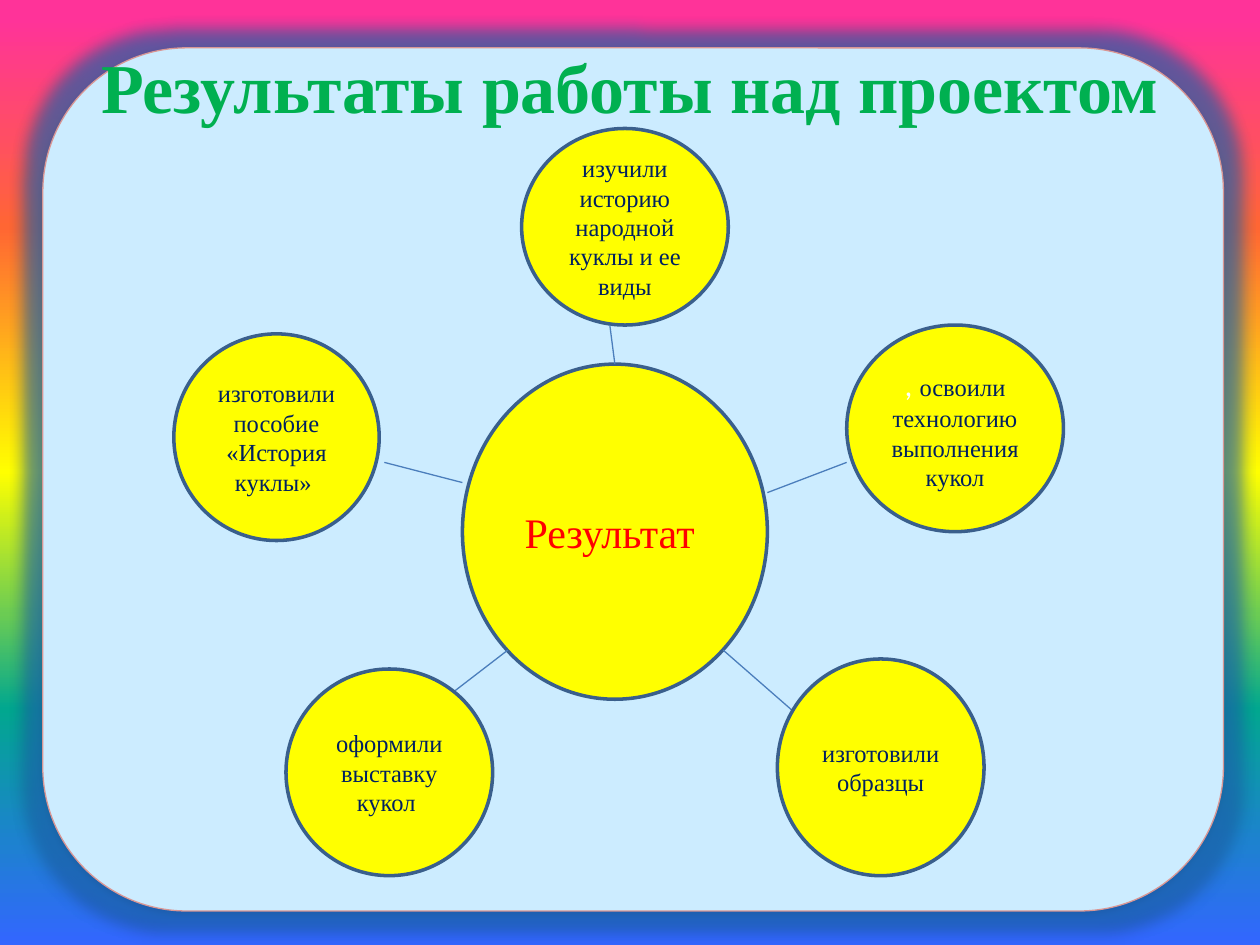
from lxml.etree import SubElement
from pptx import Presentation
from pptx.dml.color import RGBColor
from pptx.enum.shapes import MSO_CONNECTOR, MSO_SHAPE
from pptx.enum.text import MSO_ANCHOR, PP_ALIGN
from pptx.oxml.ns import qn
from pptx.util import Inches, Pt

# Content
TITLE = "Результаты работы над проектом"
COLORS = {
    "panel": "CCECFF", "panel_line": "D99694", "glow": "1F6FC0", "shadow": "000000",
    "circle": "FFFF00", "circle_line": "3A5F8C", "link": "4B7EBC",
    "title": "00B050", "hub": "FF0000", "result": "002060", "comma": "FFFFFF",
}
RAINBOW = [
    (2, "FF3399"), (14, "FF4D66"), (19, "FF5A4D"), (24, "FF6633"), (50, "FFFF00"),
    (55, "CCEE1C"), (65, "6BCC53"), (75, "01A78F"), (89, "1D82CF"), (100, "3366FF"),
]
STYLES = {
    "title": {"size": Pt(40), "name": "Times New Roman", "bold": True},
    "hub": {"size": Pt(24), "name": "Times New Roman"},
    "result": {"size": Pt(14), "name": "Times New Roman"},
    "comma": {"size": Pt(18), "name": "Calibri"},
}
# Circles: left, top, width, height, then (text, style) runs
HUB = ((3.67, 2.89, 2.42, 2.66), [("Результат ", "hub")])
RESULTS = [
    ((4.14, 1.02, 1.64, 1.56), [("изучили историю народной куклы и ее виды", "result")]),
    ((6.72, 2.58, 1.72, 1.64),
     [(", ", "comma"), ("освоили технологию выполнения кукол", "result")]),
    ((1.38, 2.65, 1.63, 1.64), [("изготовили пособие «История куклы» ", "result")]),
    ((2.27, 5.31, 1.64, 1.64), [("оформили выставку кукол ", "result")]),
    ((6.17, 5.23, 1.64, 1.72), [("изготовили образцы", "result")]),
]
# Links: start, end
ARROWS = [((4.03, 5.16), (3.12, 5.86)), ((5.74, 5.16), (6.45, 5.78))]
TOP_LINK = ((4.88, 2.89), (4.84, 2.58))
SIDE_LINKS = [((3.67, 3.83), (3.05, 3.67)), ((6.09, 3.91), (6.72, 3.67))]


def rgb(key):
    return RGBColor.from_string(COLORS[key])


def add_color(parent, value, alpha=None):
    color = SubElement(parent, qn("a:srgbClr"), val=value)
    if alpha is not None:
        SubElement(color, qn("a:alpha"), val=str(alpha * 1000))


def write(frame, runs, anchor):
    frame.word_wrap = True
    frame.vertical_anchor = anchor
    paragraph = frame.paragraphs[0]
    paragraph.alignment = PP_ALIGN.CENTER
    for text, style in runs:
        run = paragraph.add_run()
        run.text = text
        for attribute, value in STYLES[style].items():
            setattr(run.font, attribute, value)
        run.font.color.rgb = rgb(style)


def add_filled(slide, preset, box, fill, line, width):
    shape = slide.shapes.add_shape(preset, *map(Inches, box))
    shape.shadow.inherit = False
    shape.fill.solid()
    shape.fill.fore_color.rgb = rgb(fill)
    shape.line.color.rgb = rgb(line)
    shape.line.width = Pt(width)
    return shape


def add_circle(slide, box, runs):
    circle = add_filled(slide, MSO_SHAPE.OVAL, box, "circle", "circle_line", 2)
    write(circle.text_frame, runs, MSO_ANCHOR.MIDDLE)
    return circle


def add_link(slide, start, end, arrow=False):
    link = slide.shapes.add_connector(
        MSO_CONNECTOR.STRAIGHT, *map(Inches, start + end))
    link.line.color.rgb = rgb("link")
    link.line.width = Pt(0.75)
    properties = link._element.spPr
    if arrow:
        SubElement(properties.find(qn("a:ln")), qn("a:tailEnd"), type="arrow")
    SubElement(properties, qn("a:effectLst"))
    return link


def add_background(slide):
    fill = slide.background.fill
    fill.gradient()
    fill.gradient_angle = 270  # counter-clockwise: runs from top to bottom
    stops = slide._element.find(".//" + qn("a:gsLst"))
    for stop in list(stops):
        stops.remove(stop)
    for position, value in RAINBOW:
        add_color(SubElement(stops, qn("a:gs"), pos=str(position * 1000)), value)


def add_panel(slide):
    panel = add_filled(slide, MSO_SHAPE.ROUNDED_RECTANGLE, (0.34, 0.38, 9.37, 6.85),
                       "panel", "panel_line", 0.75)
    effects = panel._element.spPr.find(qn("a:effectLst"))
    glow = SubElement(effects, qn("a:glow"), rad=str(Pt(18)))
    add_color(glow, COLORS["glow"], 60)
    shadow = SubElement(effects, qn("a:outerShdw"), blurRad=str(Pt(3.1)),
                        dist=str(Pt(1.6)), dir="5400000", rotWithShape="0")
    add_color(shadow, COLORS["shadow"], 38)


def main():
    deck = Presentation()
    deck.slide_width, deck.slide_height = Inches(10), Inches(7.5)
    slide = deck.slides.add_slide(deck.slide_layouts[6])

    # Backdrop and title
    add_background(slide)
    add_panel(slide)
    title = slide.shapes.add_textbox(*map(Inches, (0.5, 0.3, 9, 1.25)))
    write(title.text_frame, [(TITLE, "title")], MSO_ANCHOR.TOP)

    # Hub, with arrows passing under the result circles
    hub = add_circle(slide, *HUB)
    for start, end in ARROWS:
        add_link(slide, start, end, arrow=True)
    for box, runs in RESULTS:
        add_circle(slide, box, runs)

    # Plain links
    add_link(slide, *TOP_LINK).begin_connect(hub, 0)
    for start, end in SIDE_LINKS:
        add_link(slide, start, end)

    deck.save("out.pptx")


if __name__ == "__main__":
    main()
